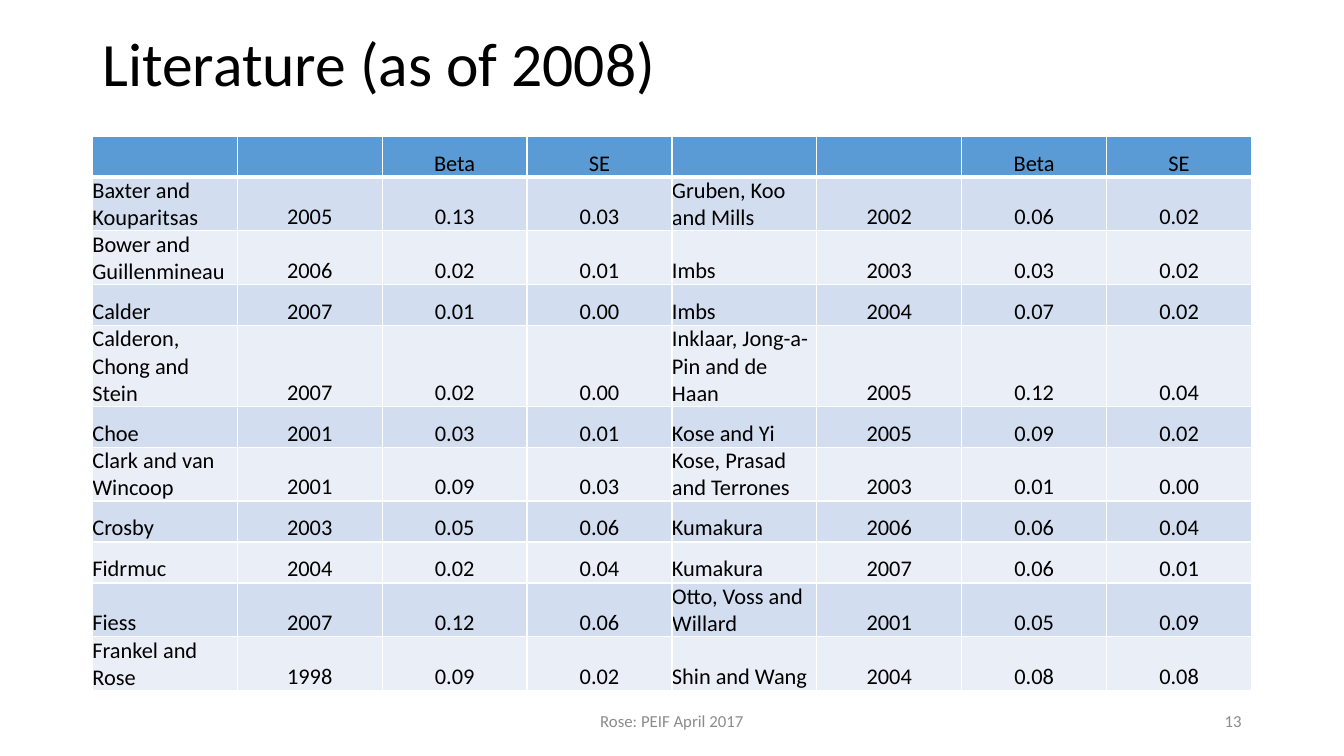
from pptx import Presentation
from pptx.dml.color import RGBColor
from pptx.enum.text import MSO_ANCHOR, PP_ALIGN
from pptx.oxml import parse_xml
from pptx.oxml.ns import nsdecls
from pptx.util import Pt

FONT = "Calibri"
LEFT, WIDTH = 66, 828
ROW = 29.3
HEAD, BANDS = "5B9BD5", ("D2DEEF", "EAEFF7")

# Each row holds two studies: authors, year, beta, standard error
ROWS = [
    ("", "", "Beta", "SE", "", "", "Beta", "SE"),
    ("Baxter and Kouparitsas", "2005", "0.13", "0.03",
     "Gruben, Koo and Mills", "2002", "0.06", "0.02"),
    ("Bower and Guillenmineau", "2006", "0.02", "0.01",
     "Imbs", "2003", "0.03", "0.02"),
    ("Calder", "2007", "0.01", "0.00", "Imbs", "2004", "0.07", "0.02"),
    ("Calderon, Chong and Stein", "2007", "0.02", "0.00",
     "Inklaar, Jong-a-Pin and de Haan", "2005", "0.12", "0.04"),
    ("Choe", "2001", "0.03", "0.01", "Kose and Yi", "2005", "0.09", "0.02"),
    ("Clark and van Wincoop", "2001", "0.09", "0.03",
     "Kose, Prasad and Terrones", "2003", "0.01", "0.00"),
    ("Crosby", "2003", "0.05", "0.06", "Kumakura", "2006", "0.06", "0.04"),
    ("Fidrmuc", "2004", "0.02", "0.04", "Kumakura", "2007", "0.06", "0.01"),
    ("Fiess", "2007", "0.12", "0.06",
     "Otto, Voss and Willard", "2001", "0.05", "0.09"),
    ("Frankel and Rose", "1998", "0.09", "0.02",
     "Shin and Wang", "2004", "0.08", "0.08"),
]


def color(code):
    return RGBColor.from_string(code)


def style(para, size, code, align):
    para.alignment = align
    para.font.name = FONT
    para.font.size = Pt(size)
    para.font.color.rgb = color(code)


def add_text(slide, text, box, size, code, align):
    frame = slide.shapes.add_textbox(*map(Pt, box)).text_frame
    frame.word_wrap = True
    frame.vertical_anchor = MSO_ANCHOR.MIDDLE
    para = frame.paragraphs[0]
    para.text = text
    style(para, size, code, align)
    return para


def add_edges(cell, base):
    props = cell._tc.get_or_add_tcPr()
    for side, width in (("L", 1), ("R", 1), ("T", 1), ("B", base)):
        props.append(parse_xml(
            f'<a:ln{side} {nsdecls("a")} w="{Pt(width)}"><a:solidFill>'
            f'<a:srgbClr val="FFFFFF"/></a:solidFill></a:ln{side}>'))


def fill_cell(cell, text, fill, align, base):
    cell.margin_left = cell.margin_right = 0
    cell.margin_top = cell.margin_bottom = 0
    cell.vertical_anchor = MSO_ANCHOR.BOTTOM
    add_edges(cell, base)
    cell.fill.solid()
    cell.fill.fore_color.rgb = color(fill)
    para = cell.text_frame.paragraphs[0]
    if text:
        para.text = text
    style(para, 16, "000000", align)


def add_grid(slide):
    count = len(ROWS[0])
    table = slide.shapes.add_table(
        len(ROWS), count, Pt(LEFT), Pt(97.2), Pt(WIDTH),
        Pt(ROW * len(ROWS))).table
    for col in table.columns:
        col.width = Pt(WIDTH / count)
    for r, row in enumerate(ROWS):
        table.rows[r].height = Pt(ROW)
        fill = BANDS[(r - 1) % 2] if r else HEAD
        for c, text in enumerate(row):
            align = PP_ALIGN.CENTER if c % 4 else PP_ALIGN.LEFT
            fill_cell(table.cell(r, c), text, fill, align, 1 if r else 3)


def main():
    deck = Presentation()
    deck.slide_width, deck.slide_height = Pt(960), Pt(540)
    slide = deck.slides.add_slide(deck.slide_layouts[6])

    # Title
    title = add_text(slide, "Literature (as of 2008)",
                     (LEFT, 20.2, WIDTH, 55.4), 44, "000000", PP_ALIGN.LEFT)
    title.line_spacing = 0.9

    # Table of estimates
    add_grid(slide)

    # Footer and page number
    add_text(slide, "Rose: PEIF April 2017", (318, 500.5, 324, 28.8),
             12, "8C8C8C", PP_ALIGN.CENTER)
    add_text(slide, "13", (678, 500.5, 216, 28.8),
             12, "8C8C8C", PP_ALIGN.RIGHT)

    deck.save("out.pptx")


if __name__ == "__main__":
    main()
